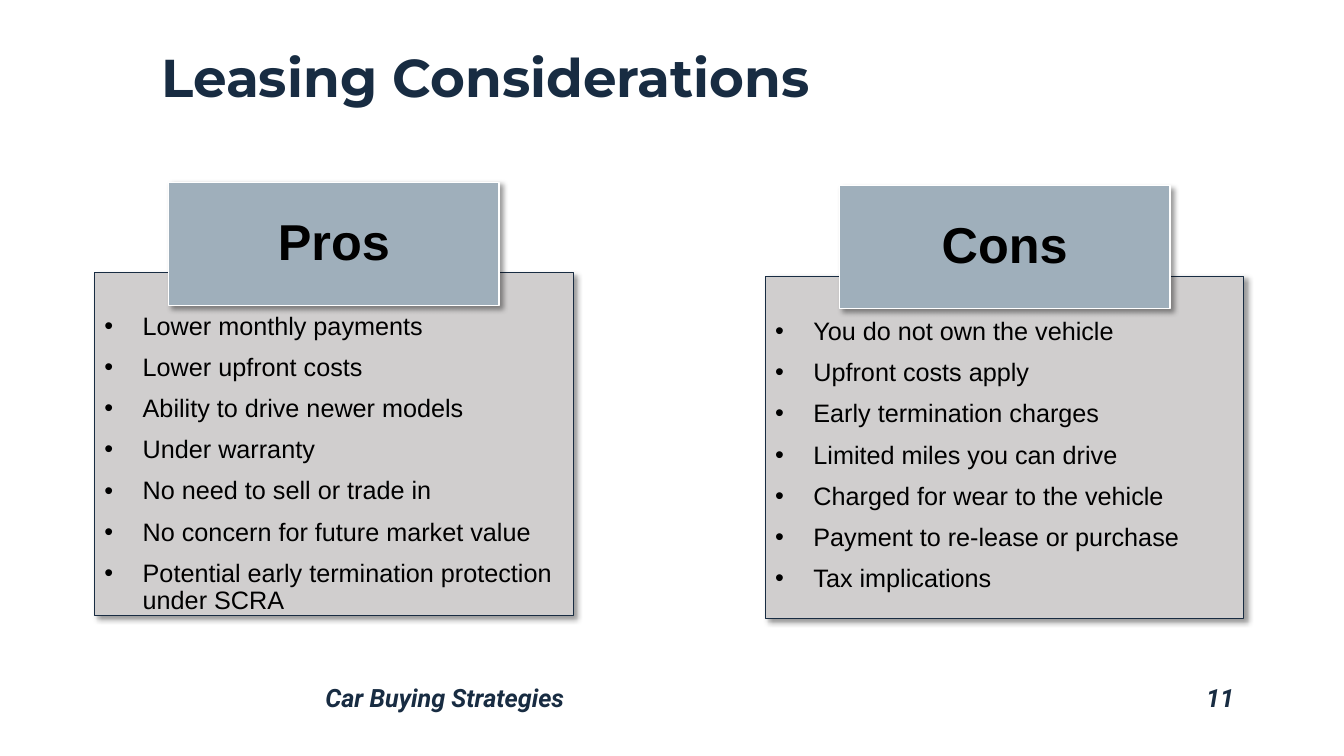
from dataclasses import dataclass

import pptx
import pptx.dml.color
import pptx.enum.shapes
import pptx.enum.text
import pptx.oxml
import pptx.oxml.ns
import pptx.util
from lxml import etree

ALIGN = pptx.enum.text.PP_ALIGN
ANCHOR = pptx.enum.text.MSO_ANCHOR


@dataclass(frozen=True)
class Theme:
    navy: str = "182C42"
    black: str = "000000"
    white: str = "FFFFFF"
    panel: str = "D0CECE"
    header: str = "9FAFBB"
    title_font: str = "Montserrat"
    footer_font: str = "Roboto"
    body_font: str = "Arial"
    title_size: int = 38
    header_size: int = 36
    body_size: int = 18


class Deck:
    """Holds the theme and the current slide, measured in 64 columns by 36 rows."""

    def __init__(self, theme):
        self.theme = theme
        self.prs = pptx.Presentation()
        self.prs.slide_width = pptx.util.Inches(13.33)
        self.prs.slide_height = pptx.util.Inches(7.5)
        self.s = self.prs.slides.add_slide(self.prs.slide_layouts[5])

    def box(self, col, row, cols, rows):
        x, y = self.prs.slide_width / 64, self.prs.slide_height / 36
        return [round(v) for v in (col * x, row * y, cols * x, rows * y)]

    def set_text(self, tf, lines, font, size, color, bold=False, italic=False,
                 align=ALIGN.LEFT, anchor=ANCHOR.TOP, bullets=False):
        tf.word_wrap = True
        tf.auto_size = pptx.enum.text.MSO_AUTO_SIZE.NONE
        tf.vertical_anchor = anchor
        tf.text = "\n".join(lines)
        for i, p in enumerate(tf.paragraphs):
            p.alignment = align
            p.line_spacing = 0.9
            p.space_before = pptx.util.Pt(10 if i else 0)
            if bullets:
                self.bullet(p)
            for r in p.runs:
                r.font.name, r.font.size = font, pptx.util.Pt(size)
                r.font.bold, r.font.italic = bold, italic
                r.font.color.rgb = pptx.dml.color.RGBColor.from_string(color)

    def bullet(self, p):
        pPr = p._p.get_or_add_pPr()
        indent = pptx.util.Inches(0.38)
        pPr.set("marL", str(indent))
        pPr.set("indent", str(-indent))
        etree.SubElement(pPr, pptx.oxml.ns.qn("a:buFont"), typeface="Arial")
        etree.SubElement(pPr, pptx.oxml.ns.qn("a:buChar"), char="•")

    def title(self, text, *place):
        sp = self.s.shapes.title
        sp.left, sp.top, sp.width, sp.height = self.box(*place)
        t = self.theme
        self.set_text(sp.text_frame, [text], t.title_font, t.title_size, t.navy,
                      bold=True, anchor=ANCHOR.BOTTOM)

    def footer(self, text, *place, align=ALIGN.LEFT):
        sp = self.s.shapes.add_textbox(*self.box(*place))
        t = self.theme
        self.set_text(sp.text_frame, [text], t.footer_font, t.body_size, t.navy,
                      bold=True, italic=True, align=align)

    def card(self, place, fill, line, width):
        sp = self.s.shapes.add_shape(
            pptx.enum.shapes.MSO_SHAPE.RECTANGLE, *self.box(*place))
        sp.fill.solid()
        sp.fill.fore_color.rgb = pptx.dml.color.RGBColor.from_string(fill)
        sp.line.color.rgb = pptx.dml.color.RGBColor.from_string(line)
        sp.line.width = pptx.util.Pt(width)
        self.shadow(sp)
        return sp

    def shadow(self, sp):
        sp.shadow.inherit = False
        effects = sp._element.spPr.find(pptx.oxml.ns.qn("a:effectLst"))
        effects.append(pptx.oxml.parse_xml(
            f'<a:outerShdw {pptx.oxml.ns.nsdecls("a")} blurRad="{pptx.util.Pt(4)}" '
            f'dist="{pptx.util.Pt(3)}" dir="2700000" algn="tl" rotWithShape="0">'
            f'<a:srgbClr val="{self.theme.black}"><a:alpha val="40000"/></a:srgbClr>'
            '</a:outerShdw>'))

    def column(self, heading, points, col, row, text_drop):
        t = self.theme
        cols, head_cols = 22.8, 15.74
        # Panel with its bullet list, which starts below the header
        sp = self.card((col, row, cols, 16.32), t.panel, t.navy, 0.75)
        sp.text_frame.margin_top = self.box(0, text_drop, 0, 0)[1]
        self.set_text(sp.text_frame, points, t.body_font, t.body_size, t.black,
                      bullets=True)
        # Header centred over the panel's top edge
        place = (col + (cols - head_cols) / 2, row - 4.32, head_cols, 5.86)
        sp = self.card(place, t.header, t.white, 1)
        self.set_text(sp.text_frame, [heading], t.body_font, t.header_size, t.black,
                      bold=True, align=ALIGN.CENTER, anchor=ANCHOR.MIDDLE)


def main():
    deck = Deck(Theme())

    # Title
    deck.title("Leasing Considerations", 7.2, 0.53, 52.04, 4.9)

    # Two columns
    deck.column("Pros", [
        "Lower monthly payments",
        "Lower upfront costs",
        "Ability to drive newer models",
        "Under warranty",
        "No need to sell or trade in",
        "No concern for future market value",
        "Potential early termination protection under SCRA",
    ], 4.5, 13, 1.92)
    deck.column("Cons", [
        "You do not own the vehicle",
        "Upfront costs apply",
        "Early termination charges",
        "Limited miles you can drive",
        "Charged for wear to the vehicle",
        "Payment to re-lease or purchase",
        "Tax implications",
    ], 36.44, 13.15, 2.02)

    # Footer and page number
    deck.footer("Car Buying Strategies", 15.02, 32.4, 36.64, 1.82)
    deck.footer("11", 51.66, 32.4, 7.58, 1.82, align=ALIGN.RIGHT)

    deck.prs.save("out.pptx")


if __name__ == "__main__":
    main()
